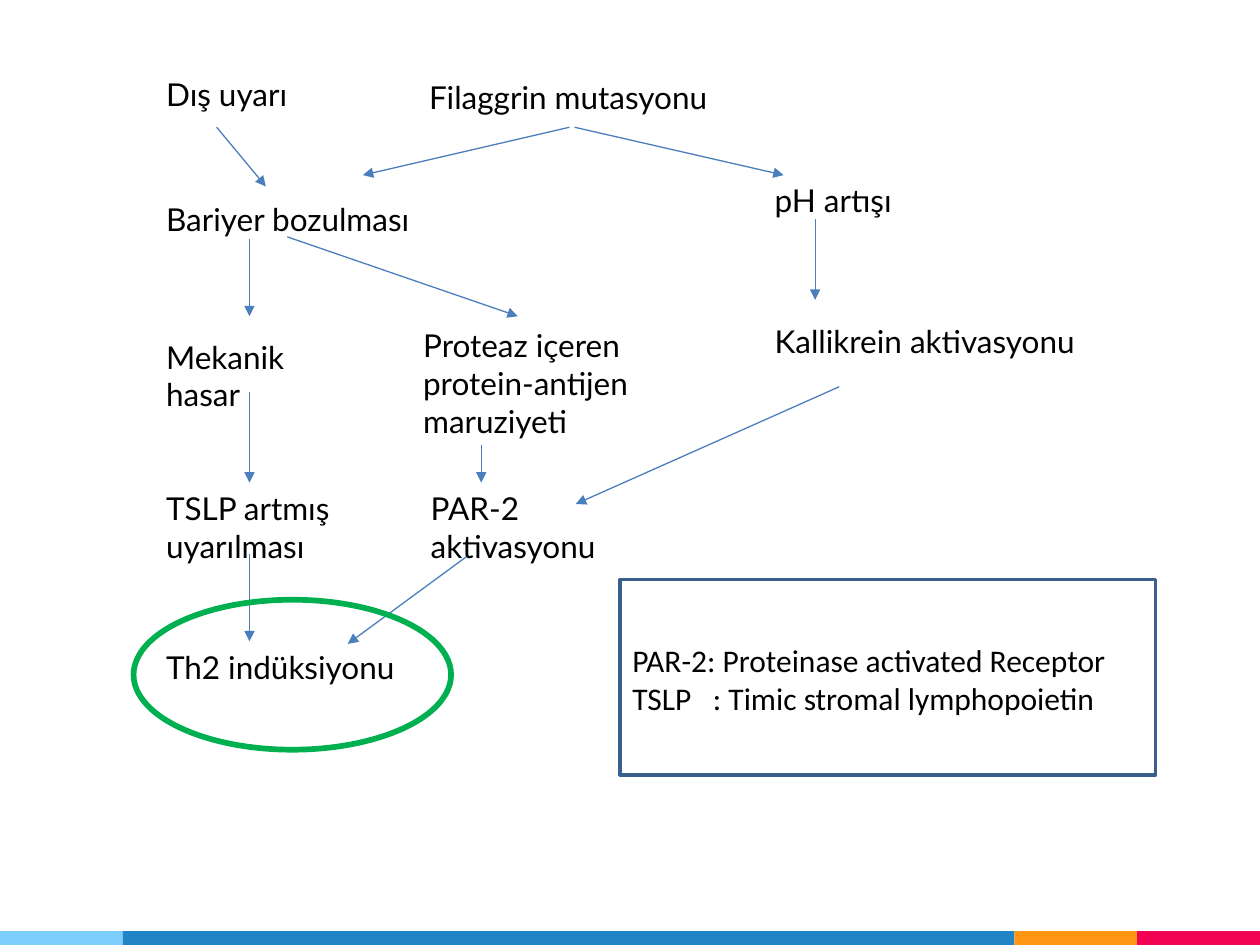
from collections import namedtuple

from lxml import etree
from pptx import Presentation
from pptx.dml.color import RGBColor
from pptx.enum.shapes import MSO_CONNECTOR, MSO_SHAPE
from pptx.enum.text import MSO_ANCHOR, PP_ALIGN
from pptx.oxml.ns import qn
from pptx.util import Inches, Pt

RECT, OVAL = MSO_SHAPE.RECTANGLE, MSO_SHAPE.OVAL
STRAIGHT = MSO_CONNECTOR.STRAIGHT
LEFT, CENTER = PP_ALIGN.LEFT, PP_ALIGN.CENTER
TOP = MSO_ANCHOR.TOP


class Theme:
    text, arrow, frame, ring = "000000", "4B7EBC", "3A5F8C", "00B050"
    sky, blue, orange, red = "7ECEFD", "2185C5", "FF9715", "F20253"
    diagram_font, legend_font, size = "Lato", "Calibri", 18
    arrow_width, frame_width, ring_width = 0.75, 2, 3.25


# All boxes are in grid cells: 100 columns by 75 rows over the slide.
Box = namedtuple("Box", "x y w h")
COLUMNS, ROWS = 100, 75
CELL = Inches(10) // COLUMNS


def cells(*values):
    return [round(v * CELL) for v in values]


def inside(box, x, y, w=0, h=0):
    return Box(box.x + x, box.y + y, w, h)


def add_text(s, box, lines, font=Theme.diagram_font, size=Theme.size,
             color=Theme.text, align=LEFT, wrap=True, tab=None):
    tf = s.shapes.add_textbox(*cells(*box)).text_frame
    tf.word_wrap, tf.vertical_anchor = wrap, TOP
    for i, line in enumerate(lines):
        p = tf.paragraphs[0] if i == 0 else tf.add_paragraph()
        p.alignment = align
        r = p.add_run()
        r.text = line
        r.font.name, r.font.size = font, Pt(size)
        r.font.color.rgb = RGBColor.from_string(color)
        if tab:
            stops = etree.SubElement(p._p.get_or_add_pPr(), qn("a:tabLst"))
            etree.SubElement(stops, qn("a:tab"), pos=str(cells(tab)[0]), algn="l")


def add_block(s, kind, box, fill=None, line=None, width=1):
    sp = s.shapes.add_shape(kind, *cells(*box))
    sp.shadow.inherit = False
    if fill:
        sp.fill.solid()
        sp.fill.fore_color.rgb = RGBColor.from_string(fill)
    else:
        sp.fill.background()
    if line:
        sp.line.color.rgb = RGBColor.from_string(line)
        sp.line.width = Pt(width)
    else:
        sp.line.fill.background()


def add_arrow(s, start, end):
    cxn = s.shapes.add_connector(STRAIGHT, *cells(start.x, start.y, end.x, end.y))
    cxn.line.color.rgb = RGBColor.from_string(Theme.arrow)
    cxn.line.width = Pt(Theme.arrow_width)
    etree.SubElement(cxn.line._get_or_add_ln(), qn("a:tailEnd"), type="triangle")
    etree.SubElement(cxn._element.spPr, qn("a:effectLst"))


def add_footer_stripe(s, box):
    end = 0.0975 * box.w
    x = box.x
    for color, w in ((Theme.sky, end), (Theme.blue, box.w - 3 * end),
                     (Theme.orange, end), (Theme.red, end)):
        add_block(s, RECT, Box(x, box.y, w, box.h), fill=color)
        x += w


def add_pathway(s, box):
    """Draw the steps and arrows, with offsets from the corner of the box."""
    left, middle, right, stem = 0, 21, 48.3, 7.6
    steps = (
        ("Dış uyarı", left, 0, 21.2, 3.4),
        ("Bariyer bozulması", left, 9.9, 26, 3.4),
        ("Mekanik hasar", left, 20.8, 17, 6.4),
        ("TSLP artmış uyarılması", left, 32.8, 20.5, 5.7),
        ("Th2 indüksiyonu", left, 45.4, 22.3, 3.4),
        ("Proteaz içeren protein-antijen maruziyeti", middle - 0.6, 19.9, 22.9, 5.7),
        ("PAR-2 aktivasyonu", middle, 32.8, 19.2, 3.4),
        ("pH artışı", right, 8.4, 25.7, 3.4),
        ("Kallikrein aktivasyonu", right, 19.6, 26.3, 3.4),
    )
    add_text(s, inside(box, 17.6, 0.2, 30.6, 3.4), ["Filaggrin mutasyonu"], align=CENTER)
    for label, *place in steps:
        add_text(s, inside(box, *place), [label])

    arrows = (
        (5, 4.6, 8.9, 9.3),
        (33, 4.6, 16.6, 8.4),
        (33.4, 4.6, 50, 8.4),
        (52.5, 11.9, 52.5, 18.3),
        (54.4, 25.2, 33.5, 34.5),
        (10.6, 13.3, 28.9, 19.6),
        (stem, 13.5, stem, 19.6),
        (stem, 25.6, stem, 32.8),
        (stem, 38.5, stem, 45.4),
        (26, 29.8, 26, 32.8),
        (24.8, 38.7, 15.4, 45.6),
    )
    for x1, y1, x2, y2 in arrows:
        add_arrow(s, inside(box, x1, y1), inside(box, x2, y2))


def add_legend(s, box):
    add_block(s, RECT, box, line=Theme.frame, width=Theme.frame_width)
    add_text(s, inside(box, 0, 4.4, 40.6, 7.1),
             ["PAR-2: Proteinase activated Receptor",
              "TSLP\t: Timic stromal lymphopoietin"],
             font=Theme.legend_font, wrap=False, tab=6.4)


def main():
    prs = Presentation()
    prs.slide_width, prs.slide_height = COLUMNS * CELL, ROWS * CELL
    s = prs.slides.add_slide(prs.slide_layouts[6])
    add_footer_stripe(s, Box(0, ROWS - 1.1, COLUMNS, 1.1))
    add_pathway(s, Box(12.2, 5.5, 75, 49))
    add_legend(s, Box(49.2, 46, 42.5, 15.5))
    add_block(s, OVAL, Box(10.6, 47.6, 25.2, 11.9),
              line=Theme.ring, width=Theme.ring_width)
    prs.save("out.pptx")


if __name__ == "__main__":
    main()
